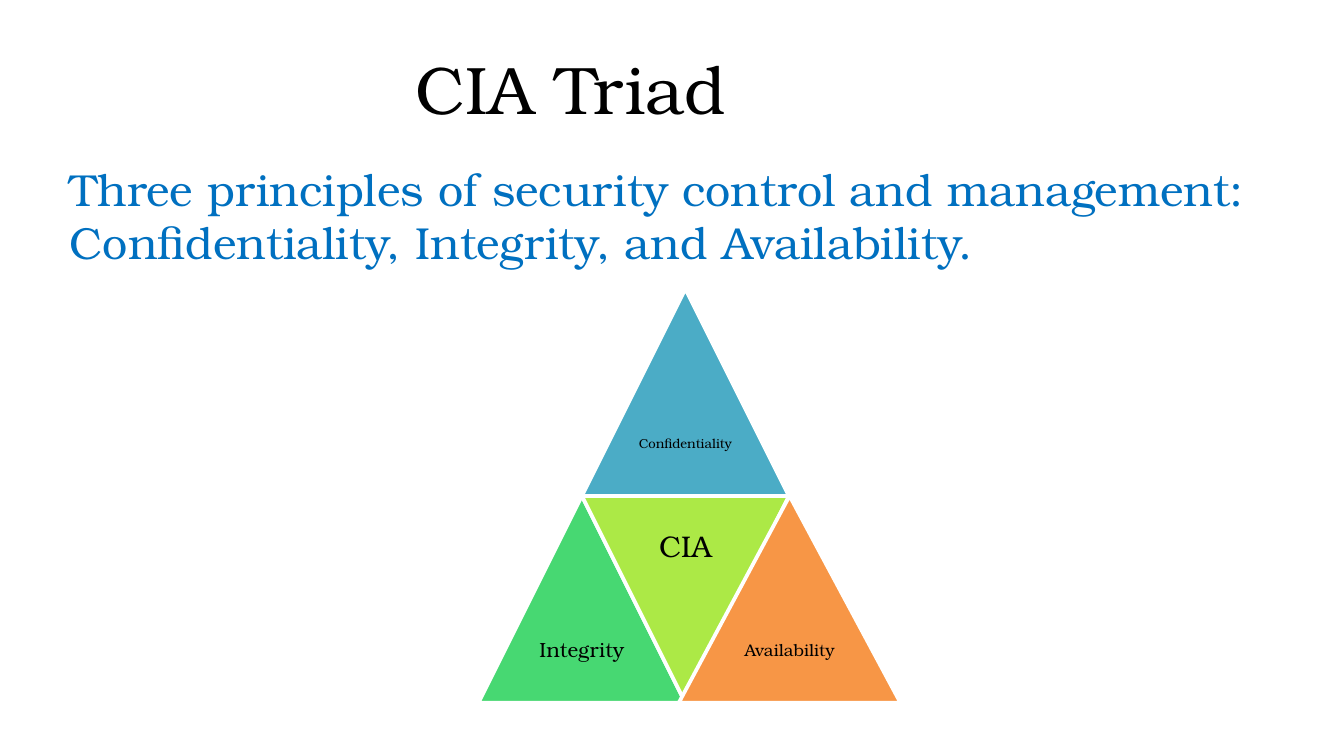
from lxml import etree
from pptx import Presentation
from pptx.dml.color import RGBColor
from pptx.enum.shapes import MSO_SHAPE
from pptx.enum.text import MSO_ANCHOR, MSO_AUTO_SIZE, PP_ALIGN
from pptx.oxml.ns import qn
from pptx.util import Pt

TRIANGLE = MSO_SHAPE.ISOSCELES_TRIANGLE
MIDDLE, TOP = MSO_ANCHOR.MIDDLE, MSO_ANCHOR.TOP
CENTER, LEFT = PP_ALIGN.CENTER, PP_ALIGN.LEFT
NO_AUTOFIT = MSO_AUTO_SIZE.NONE

FONT = "TeX Gyre Bonum"
COLORS = {
    "text": "000000",
    "principles": "0070C0",
    "outline": "FFFFFF",
    "confidentiality": "4BACC6",
    "integrity": "47D872",
    "center": "ACE946",
    "availability": "F79646",
}


def rgb(name):
    return RGBColor.from_string(COLORS[name])


def write(shape, text, size, color, align, anchor):
    frame = shape.text_frame
    frame.text = text
    frame.word_wrap = True
    frame.auto_size = NO_AUTOFIT
    frame.vertical_anchor = anchor
    paragraph = frame.paragraphs[0]
    paragraph.alignment = align
    paragraph.font.name = FONT
    paragraph.font.size = Pt(size)
    paragraph.font.color.rgb = rgb(color)
    return paragraph


def place(shape, left, top, width, height):
    shape.left, shape.top = Pt(left), Pt(top)
    shape.width, shape.height = Pt(width), Pt(height)


def fill_title(title, box):
    place(title, *box)
    write(title, "CIA Triad", 36, "text", CENTER, MIDDLE)


def fill_principles(body, box):
    place(body, *box)
    paragraph = write(
        body,
        "Three principles of security control and management: "
        "Confidentiality, Integrity, and Availability.",
        24, "principles", LEFT, TOP)
    properties = paragraph._p.get_or_add_pPr()
    properties.set("marL", "0")
    properties.set("indent", "0")
    etree.SubElement(properties, qn("a:buNone"))


def add_segment(group, box, label, size, inset, color, inverted=False):
    """Add a triangle with its label in the half of the box at its base."""
    left, top, width, height = box
    triangle = group.shapes.add_shape(TRIANGLE, *map(Pt, box))
    triangle.shadow.inherit = False
    triangle.fill.solid()
    triangle.fill.fore_color.rgb = rgb(color)
    triangle.line.color.rgb = rgb("outline")
    triangle.line.width = Pt(2)
    triangle.rotation = 180 if inverted else 0

    label_top = top if inverted else top + height / 2
    label_box = (left + width / 4, label_top, width / 2, height / 2)
    caption = group.shapes.add_textbox(*map(Pt, label_box))
    paragraph = write(caption, label, size, "text", CENTER, MIDDLE)
    paragraph.line_spacing = 0.9
    frame = caption.text_frame
    frame.margin_left = frame.margin_right = Pt(inset)
    frame.margin_top = frame.margin_bottom = Pt(inset)


def add_triad(slide, box):
    left, top, width, height = box
    side = height / 2
    middle_left, base_top = left + side / 2, top + side
    availability_width = 118.8
    availability_left = left + width - availability_width
    group = slide.shapes.add_group_shape()
    add_segment(group, (middle_left, top, side, side),
                "Confidentiality", 7, 2, "confidentiality")
    add_segment(group, (left, base_top, side, side),
                "Integrity", 11, 3.5, "integrity")
    add_segment(group, (middle_left, base_top, side, side),
                "CIA", 16, 5, "center", inverted=True)
    add_segment(group, (availability_left, base_top, availability_width, side),
                "Availability", 9, 3, "availability")


def main():
    presentation = Presentation()
    presentation.slide_width, presentation.slide_height = Pt(720), Pt(405)
    slide = presentation.slides.add_slide(presentation.slide_layouts[1])
    fill_title(slide.shapes.title, (72, 20, 468, 54))
    fill_principles(slide.placeholders[1], (30.2, 82.8, 678.2, 60))
    add_triad(slide, (256.3, 154.8, 226.1, 221.8))
    presentation.save("out.pptx")


if __name__ == "__main__":
    main()
